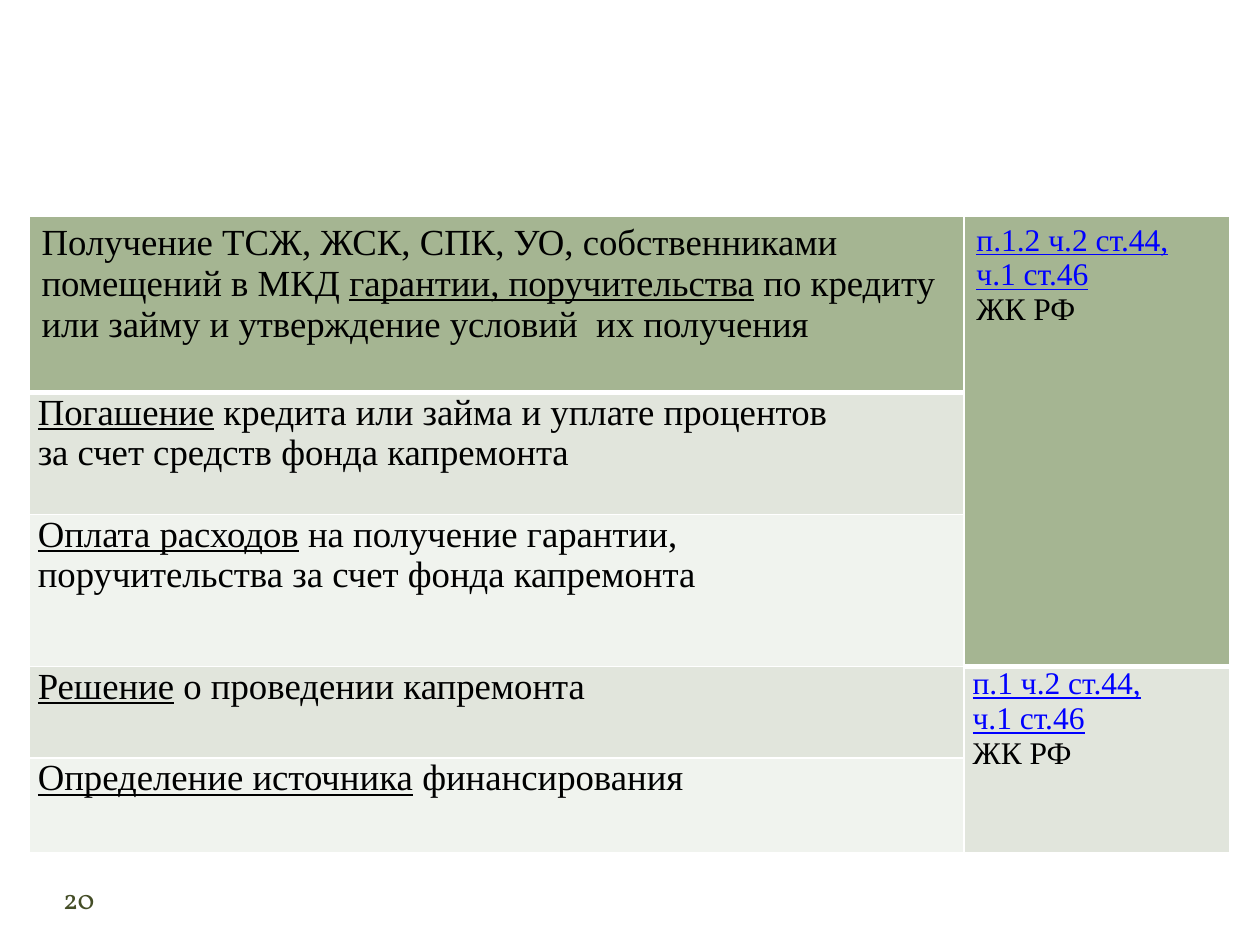
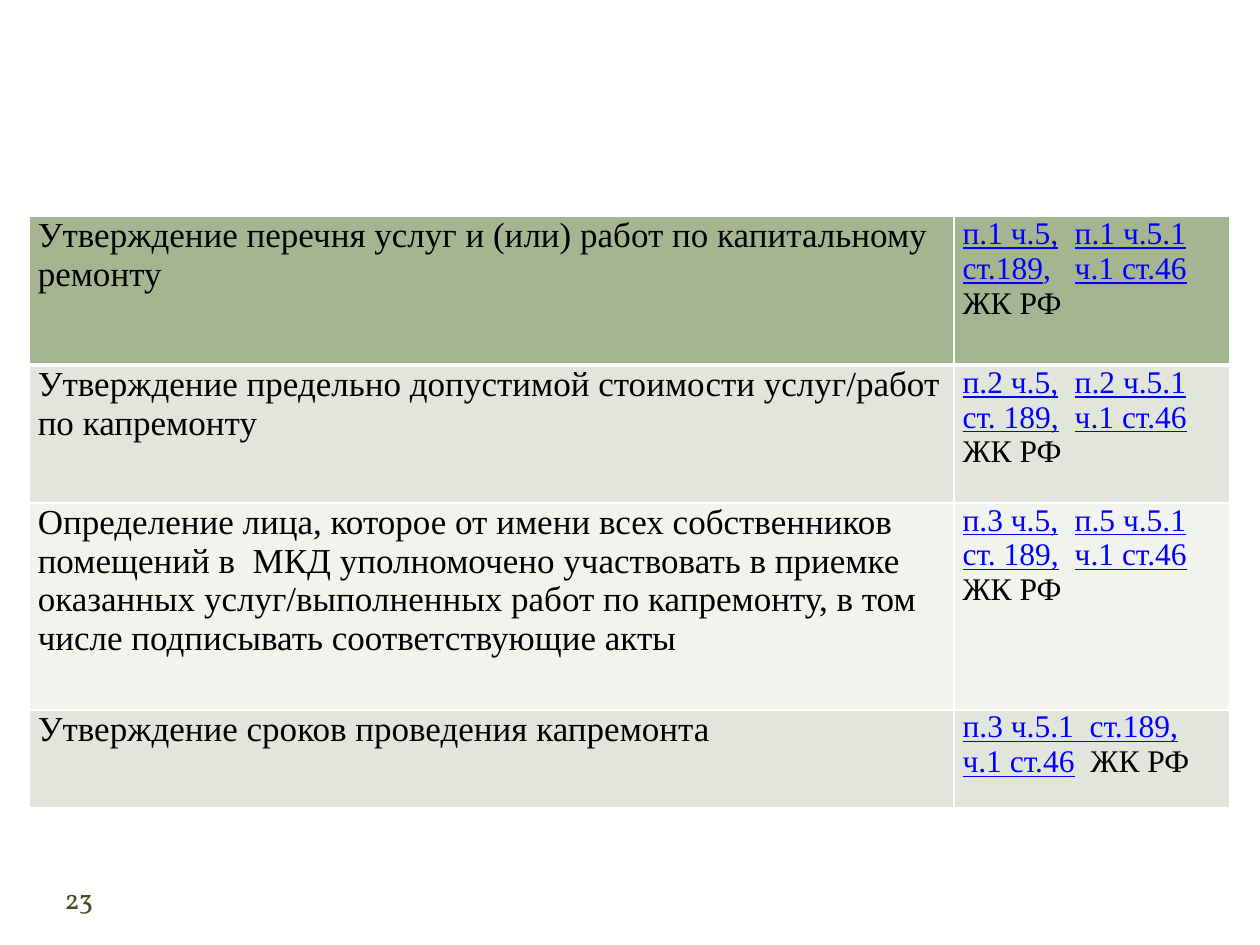
from lxml.etree import SubElement as Sub
from pptx import Presentation as Deck
from pptx.dml.color import RGBColor as Rgb
from pptx.enum.text import MSO_ANCHOR as Anchor, PP_ALIGN as Align
from pptx.oxml.ns import qn
from pptx.util import Inches, Pt

WIDTH, HEIGHT = Inches(10), Inches(7.5)
HEAD, BANDS = "A5B592", ("F0F3EE", "E1E5DC")
EDGE, INK, LINK, PAGE = "FFFFFF", "000000", "0000FF", "444D26"
SERIF, FOOT = "Times New Roman", "Vollkorn"
TAB = Inches(0.89)

LOANS = [
    ("Получение ТСЖ, ЖСК, СПК, УО, собственниками помещений в МКД "
     "_гарантии, поручительства_ по кредиту или займу и утверждение "
     "условий  их получения",
     "_п.1.2 ч.2 ст.44,_\n_ч.1 ст.46_\nЖК РФ"),
    ("_Погашение_ кредита или займа и уплате процентов\n"
     "за счет средств фонда капремонта", None),
    ("_Оплата расходов_ на получение гарантии,\n"
     "поручительства за счет фонда капремонта", None),
    ("_Решение_ о проведении капремонта",
     "_п.1 ч.2 ст.44,_\n_ч.1 ст.46_\nЖК РФ"),
    ("_Определение источника_ финансирования", None),
]
WORKS = [
    ("Утверждение перечня услуг и (или) работ по капитальному ремонту",
     "_п.1 ч.5,_\t_п.1 ч.5.1_\n_ст.189_,\t_ч.1 ст.46_\nЖК РФ"),
    ("Утверждение предельно допустимой стоимости услуг/работ по капремонту",
     "_п.2 ч.5,_\t_п.2 ч.5.1_\n_ст. 189,_\t_ч.1 ст.46_\nЖК РФ"),
    ("Определение лица, которое от имени всех собственников помещений в  МКД "
     "уполномочено участвовать в приемке оказанных услуг/выполненных работ "
     "по капремонту, в том числе подписывать соответствующие акты",
     "_п.3 ч.5,_\t_п.5 ч.5.1_\n_ст. 189,_\t_ч.1 ст.46_\nЖК РФ"),
    ("Утверждение сроков проведения капремонта",
     "_п.3 ч.5.1  ст.189,_\n_ч.1 ст.46_  ЖК РФ"),
]


def wide(share):
    return int(WIDTH * share / 100)


def tall(share):
    return int(HEIGHT * share / 100)


def tint(hue):
    return Rgb.from_string(hue)


def style(run, size, hue, face=SERIF):
    run.font.size, run.font.name = Pt(size), face
    run.font.color.rgb = tint(hue)
    run.font.bold = False


def edge(cell, head):
    props = cell._tc.get_or_add_tcPr()
    for spot, side in enumerate("LRTB"):
        thick = 3 if head and side == "B" else 1
        line = Sub(props, qn(f"a:ln{side}"), w=str(Pt(thick)))
        paint = Sub(line, qn("a:solidFill"))
        Sub(paint, qn("a:srgbClr"), val=EDGE)
        props.insert(spot, line)


def stop(para):
    tabs = Sub(para._p.get_or_add_pPr(), qn("a:tabLst"))
    Sub(tabs, qn("a:tab"), pos=str(TAB), algn="l")


def write(cell, text, size, law):
    frame = cell.text_frame
    for row, line in enumerate(text.split("\n")):
        para = frame.add_paragraph() if row else frame.paragraphs[0]
        if "\t" in line:
            stop(para)
        for turn, bit in enumerate(line.split("_")):
            if bit:
                run = para.add_run()
                run.text = bit
                style(run, size, LINK if law and "ЖК" not in bit else INK)
                run.font.underline = turn % 2 == 1


def pad(cell, side, top):
    cell.margin_left = cell.margin_right = Inches(side)
    cell.margin_top = cell.margin_bottom = Inches(top)


def grid(slide, rows, cols, highs, size, roomy=False):
    frame = slide.shapes.add_table(len(rows), 2, wide(2.3), tall(22.93),
                                   wide(sum(cols)), tall(sum(highs)))
    table = frame.table
    table.first_row = table.horz_banding = False
    for col, share in zip(table.columns, cols):
        col.width = wide(share)
    for row, share in zip(table.rows, highs):
        row.height = tall(share)
    tops = [0, 0]
    for r, pair in enumerate(rows):
        for c, text in enumerate(pair):
            if text is not None:
                tops[c] = r
            head = tops[c] == 0
            cell = table.cell(r, c)
            cell.fill.solid()
            cell.fill.fore_color.rgb = tint(HEAD if head else BANDS[tops[c] % 2])
            edge(cell, head)
            pad(cell, *((0.1, 0.05) if roomy and head else (0.07, 0)))
            if text is not None:
                write(cell, text, 18 if c else size, c == 1)
    return table


def number(slide, text):
    box = slide.shapes.add_textbox(wide(3.5), tall(92.4), wide(5.5), tall(5.33))
    frame = box.text_frame
    frame.word_wrap = True
    frame.vertical_anchor = Anchor.MIDDLE
    frame.margin_left = frame.margin_right = 0
    frame.margin_top = frame.margin_bottom = 0
    frame.text = text
    para = frame.paragraphs[0]
    para.alignment = Align.CENTER
    style(para.runs[0], 16, PAGE, FOOT)


def main():
    deck = Deck()
    deck.slide_width, deck.slide_height = WIDTH, HEIGHT
    blank = deck.slide_layouts[6]

    loan = deck.slides.add_slide(blank)
    number(loan, "20")
    table = grid(loan, LOANS, (74.2, 21.1), (18.6, 12.9, 16.1, 9.7, 10), 21, True)
    table.cell(0, 1).merge(table.cell(2, 1))
    table.cell(3, 1).merge(table.cell(4, 1))

    work = deck.slides.add_slide(blank)
    number(work, "23")
    grid(work, WORKS, (73.4, 21.9), (15.7, 14.6, 21.9, 10.4), 20)

    deck.save("out.pptx")


if __name__ == "__main__":
    main()
